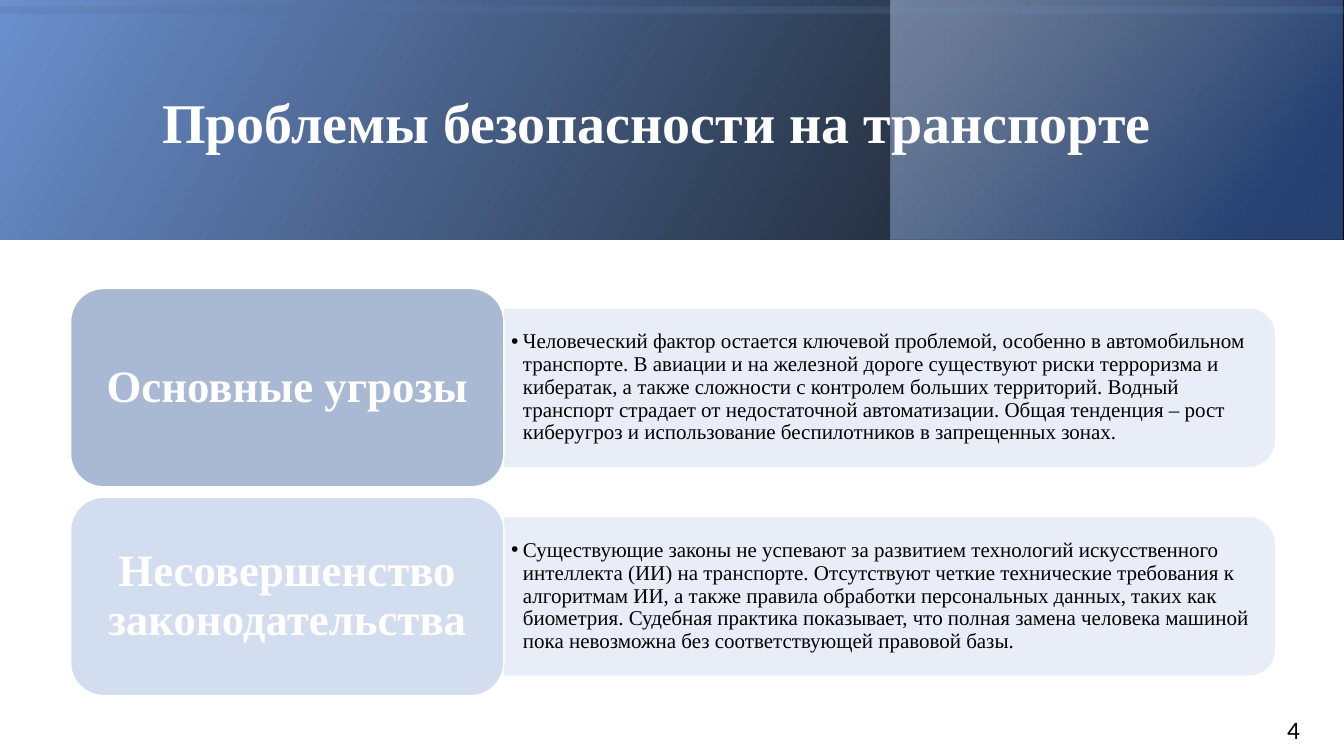
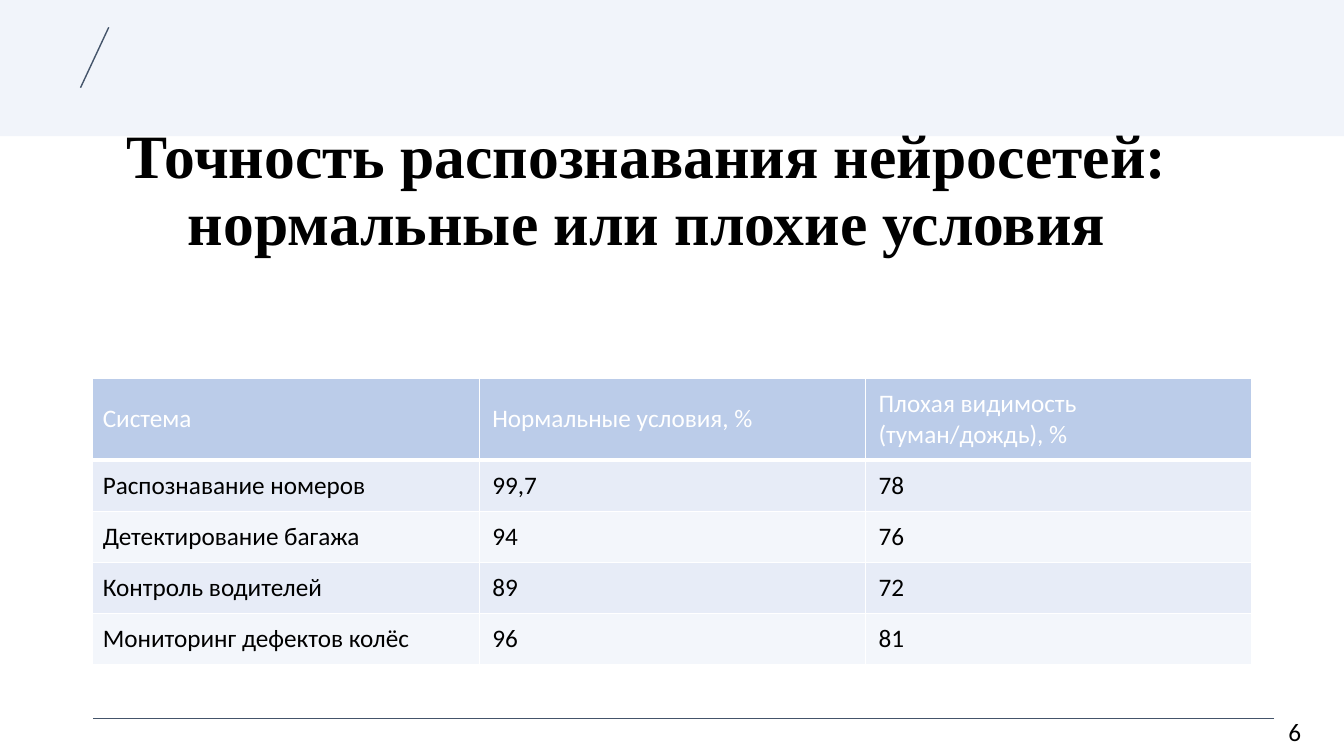
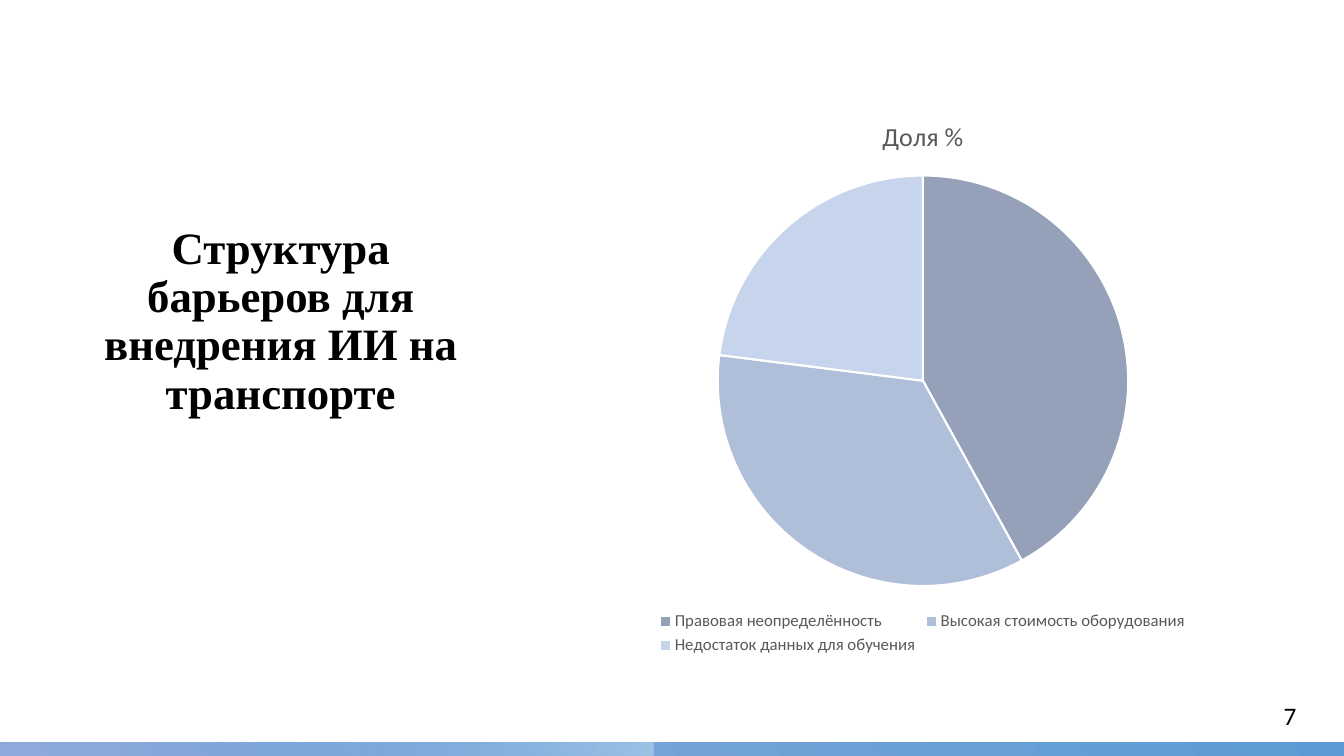
from lxml import etree
from pptx import Presentation
from pptx.chart.data import CategoryChartData
from pptx.dml.color import RGBColor
from pptx.enum import chart as ch, shapes, text
from pptx.oxml import ns
from pptx.util import Cm, Pt

WHITE = RGBColor(0xFF, 0xFF, 0xFF)
BLACK = RGBColor(0, 0, 0)
GRAY = RGBColor(0x59, 0x59, 0x59)
SLATE = RGBColor(0x44, 0x54, 0x6A)
BLUE = RGBColor(0x6C, 0x91, 0xCF)
NAVY = RGBColor(0x33, 0x5B, 0x9F)
LIGHT_BLUE = RGBColor(0xBB, 0xCC, 0xE9)
PANEL = RGBColor(0xE7, 0xEC, 0xF7)
ROW_PALE = RGBColor(0xF3, 0xF6, 0xFB)
SKY = RGBColor(0x5B, 0x9B, 0xD5)
PALE_SKY = RGBColor(0x9D, 0xC3, 0xE6)
LAVENDER = RGBColor(0x8E, 0xAA, 0xDB)
SLICES = [RGBColor(0x94, 0xA1, 0xB8), RGBColor(0xAF, 0xBF, 0xDA), RGBColor(0xC6, 0xD4, 0xEC)]

SERIF, SANS = "Times New Roman", "Calibri"
WIDTH, HEIGHT = 33.87, 19.05
TWO_CONTENT, TITLE_ONLY = 3, 5

THREATS = [
    ("Основные угрозы", RGBColor(0xAA, 0xB9, 0xD3),
     "Человеческий фактор остается ключевой проблемой, особенно в автомобильном транспорте. "
     "В авиации и на железной дороге существуют риски терроризма и кибератак, а также сложности "
     "с контролем больших территорий. Водный транспорт страдает от недостаточной автоматизации. "
     "Общая тенденция – рост киберугроз и использование беспилотников в запрещенных зонах."),
    ("Несовершенство законодательства", RGBColor(0xD3, 0xDD, 0xF0),
     "Существующие законы не успевают за развитием технологий искусственного интеллекта (ИИ) "
     "на транспорте. Отсутствуют четкие технические требования к алгоритмам ИИ, а также правила "
     "обработки персональных данных, таких как биометрия. Судебная практика показывает, что полная "
     "замена человека машиной пока невозможна без соответствующей правовой базы."),
]
ACCURACY = [
    ("Система", "Нормальные условия, %", "Плохая видимость (туман/дождь), %"),
    ("Распознавание номеров", "99,7", "78"),
    ("Детектирование багажа", "94", "76"),
    ("Контроль водителей", "89", "72"),
    ("Мониторинг дефектов колёс", "96", "81"),
]
BARRIERS = {
    "Правовая неопределённость": 42,
    "Высокая стоимость оборудования": 35,
    "Недостаток данных для обучения": 23,
}


def cm_box(*lengths):
    return [Cm(v) for v in lengths]


def sub(parent, tag, **attrs):
    return etree.SubElement(parent, ns.qn(tag), {k: str(v) for k, v in attrs.items()})


def add_color(parent, color, alpha=100):
    clr = sub(parent, "a:srgbClr", val=color)
    if alpha < 100:
        sub(clr, "a:alpha", val=alpha * 1000)


def set_font(font, size, color, name=SANS, bold=False):
    for key, value in {"size": Pt(size), "name": name, "bold": bold}.items():
        setattr(font, key, value)
    font.color.rgb = color


def set_frame(sp, anchor, insets=(0.25, 0.13)):
    tf = sp.text_frame
    side, end = cm_box(*insets)
    values = {"word_wrap": True, "auto_size": text.MSO_AUTO_SIZE.NONE, "vertical_anchor": anchor,
              "margin_left": side, "margin_right": side, "margin_top": end, "margin_bottom": end}
    for key, value in values.items():
        setattr(tf, key, value)
    return tf


def write(tf, words, size, color, name=SANS, bold=False, align=text.PP_ALIGN.CENTER, spacing=0.9):
    p = tf.paragraphs[0]
    p.alignment, p.line_spacing = align, spacing
    p.space_before = Pt(0)
    r = p.add_run()
    r.text = words
    set_font(r.font, size, color, name, bold)
    return p


def place(sp, box):
    sp.left, sp.top, sp.width, sp.height = cm_box(*box)


def bring_to_front(sp):
    sp.element.getparent().append(sp.element)


def add_title(s, words, box, size, color=BLACK, anchor=text.MSO_ANCHOR.MIDDLE,
              align=text.PP_ALIGN.CENTER):
    title = s.shapes.title
    place(title, box)
    write(set_frame(title, anchor), words, size, color, SERIF, True, align)
    bring_to_front(title)


def add_block(s, box, color=None, alpha=100, line=None, kind=shapes.MSO_SHAPE.RECTANGLE):
    sp = s.shapes.add_shape(kind, *cm_box(*box))
    sp.shadow.inherit = False
    if color is not None:
        sp.fill.solid()
        sp.fill.fore_color.rgb = color
        if alpha < 100:
            clr = sp.element.spPr.find(".//" + ns.qn("a:srgbClr"))
            sub(clr, "a:alpha", val=alpha * 1000)
    if line is None:
        sp.line.fill.background()
    else:
        sp.line.color.rgb, sp.line.width = line, Pt(1)
    return sp


def add_gradient(s, box, angle, *stops):
    """Rectangle with a linear gradient; stops are (position %, colour, alpha %)."""
    sp = add_block(s, box)
    grad = etree.Element(ns.qn("a:gradFill"), rotWithShape="1")
    stop_list = sub(grad, "a:gsLst")
    for position, color, alpha in stops:
        add_color(sub(stop_list, "a:gs", pos=position * 1000), color, alpha)
    sub(grad, "a:lin", ang=angle * 60000, scaled=0)
    sp.element.spPr.find(ns.qn("a:prstGeom")).addnext(grad)


def add_line(s, *ends):
    line = s.shapes.add_connector(shapes.MSO_CONNECTOR.STRAIGHT, *cm_box(*ends))
    line.line.color.rgb, line.line.width = SLATE, Pt(1)
    sub(line.element.spPr, "a:effectLst")


def add_page_number(s, number, center, top):
    sp = s.shapes.add_textbox(*cm_box(center - 0.6, top, 1.2, 1.02))
    write(set_frame(sp, text.MSO_ANCHOR.TOP, (0, 0.13)), number, 18, BLACK, spacing=1)


def add_threat(s, body, top, label, color, words):
    """Coloured label with a bulleted panel to its right."""
    height, length = 3.99, 19.43
    middle_x, middle_y = 12.7 + length / 2, top + 2.5
    panel = add_block(s, (middle_x - height / 2, middle_y - length / 2, height, length), PANEL, 90,
                      kind=shapes.MSO_SHAPE.ROUND_2_SAME_RECTANGLE)
    panel.rotation = 90

    place(body, (12.73, top + 0.69, 19.23, 3.61))
    tf = set_frame(body, text.MSO_ANCHOR.MIDDLE, (0.15, 0.08))
    pPr = tf.paragraphs[0]._p.get_or_add_pPr()
    pPr.set("marL", str(Cm(0.3)))
    pPr.set("indent", str(Cm(-0.3)))
    sub(pPr, "a:buChar", char="•")
    write(tf, words, 15, BLACK, SERIF, align=text.PP_ALIGN.LEFT)
    bring_to_front(body)

    tag = add_block(s, (1.78, top, 10.92, 5), color, line=WHITE,
                    kind=shapes.MSO_SHAPE.ROUNDED_RECTANGLE)
    write(set_frame(tag, text.MSO_ANCHOR.MIDDLE, (0.58, 0.4)), label, 32, WHITE, SERIF, True)


def add_cell_borders(cell, bottom):
    tcPr = cell._tc.get_or_add_tcPr()
    widths = {"a:lnL": 1, "a:lnR": 1, "a:lnT": 1, "a:lnB": bottom}
    for i, (tag, width) in enumerate(widths.items()):
        ln = etree.Element(ns.qn(tag), w=str(Pt(width)))
        add_color(sub(ln, "a:solidFill"), WHITE)
        tcPr.insert(i, ln)


def add_table(s, rows, box, heights):
    table = s.shapes.add_table(len(rows), len(rows[0]), *cm_box(*box)).table
    for i, row in enumerate(rows):
        table.rows[i].height = Cm(heights[i])
        for j, words in enumerate(row):
            cell = table.cell(i, j)
            cell.margin_left, cell.margin_right = Cm(0.33 if j else 0.25), Cm(0.33)
            cell.margin_top = cell.margin_bottom = Cm(0.2)
            cell.vertical_anchor = text.MSO_ANCHOR.MIDDLE
            cell.fill.solid()
            cell.fill.fore_color.rgb = (PANEL if i % 2 else ROW_PALE) if i else LIGHT_BLUE
            write(cell.text_frame, words, 18, BLACK if i else WHITE,
                  align=text.PP_ALIGN.LEFT, spacing=1)
            add_cell_borders(cell, 1 if i else 3)


def add_pie(s, name, shares, box):
    data = CategoryChartData()
    data.categories = list(shares)
    data.add_series(name, list(shares.values()))
    chart = s.shapes.add_chart(ch.XL_CHART_TYPE.PIE, *cm_box(*box), data).chart
    set_font(chart.font, 10, BLACK)
    chart.has_title = True
    r = chart.chart_title.text_frame.paragraphs[0].add_run()
    r.text = name
    set_font(r.font, 18.6, GRAY)
    chart.has_legend = True
    chart.legend.position = ch.XL_LEGEND_POSITION.BOTTOM
    chart.legend.include_in_layout = False
    set_font(chart.legend.font, 12, GRAY)
    plot = chart.plots[0]
    plot.vary_by_categories = True
    for i, color in enumerate(SLICES):
        look = plot.series[0].points[i].format
        look.fill.solid()
        look.fill.fore_color.rgb = color
        look.line.color.rgb, look.line.width = WHITE, Pt(1.5)


def problems_slide(prs):
    s = prs.slides.add_slide(prs.slide_layouts[TWO_CONTENT])
    bodies = list(s.placeholders)[1:]
    band = 6.03
    add_gradient(s, (0, 0, WIDTH, band), 210, (0, BLACK, 96), (100, BLUE, 100))
    add_gradient(s, (22.45, 0, 11.39, band), 220, (19, NAVY, 68), (100, LIGHT_BLUE, 48))
    add_gradient(s, (0, 0.17, WIDTH, band - 0.17), 100, (23, BLUE, 16), (99, BLACK, 10))
    add_title(s, "Проблемы безопасности на транспорте", (3.84, 0.97, 27, 4.37), 40, WHITE,
              align=text.PP_ALIGN.LEFT)
    for i, (body, threat) in enumerate(zip(bodies, THREATS)):
        add_threat(s, body, 7.27 + 5.26 * i, *threat)
    add_page_number(s, "4", 32.6, 17.88)


def accuracy_slide(prs):
    s = prs.slides.add_slide(prs.slide_layouts[TITLE_ONLY])
    add_block(s, (0, 0, WIDTH, 3.43), LIGHT_BLUE, 20)
    add_title(s, "Точность распознавания нейросетей: нормальные или плохие условия",
              (2.03, 2.9, 28.55, 3.75), 44, anchor=text.MSO_ANCHOR.BOTTOM)
    add_line(s, 2.74, 0.69, 2.03, 2.21)
    add_line(s, 32.11, 18.11, 2.34, 18.11)
    add_table(s, ACCURACY, (2.34, 9.53, 29.21, 7.22), [2.06] + [1.29] * 4)
    add_page_number(s, "6", 32.63, 17.93)


def barriers_slide(prs):
    s = prs.slides.add_slide(prs.slide_layouts[TITLE_ONLY])
    add_title(s, "Структура барьеров для внедрения ИИ на транспорте", (2.34, 2.67, 9.47, 10.9), 32)
    strip = 0.34
    add_gradient(s, (0, HEIGHT - strip, WIDTH, strip), 150, (0, SKY, 100), (100, LAVENDER, 100))
    add_gradient(s, (0, HEIGHT - strip, 16.46, strip), 10, (19, SKY, 0), (100, PALE_SKY, 100))
    add_pie(s, "Доля %", BARRIERS, (14.99, 2.44, 16.54, 14.17))
    add_page_number(s, "7", 32.51, 17.53)


def main():
    prs = Presentation()
    prs.slide_width, prs.slide_height = cm_box(WIDTH, HEIGHT)
    for build in (problems_slide, accuracy_slide, barriers_slide):
        build(prs)
    prs.save("out.pptx")


if __name__ == "__main__":
    main()
